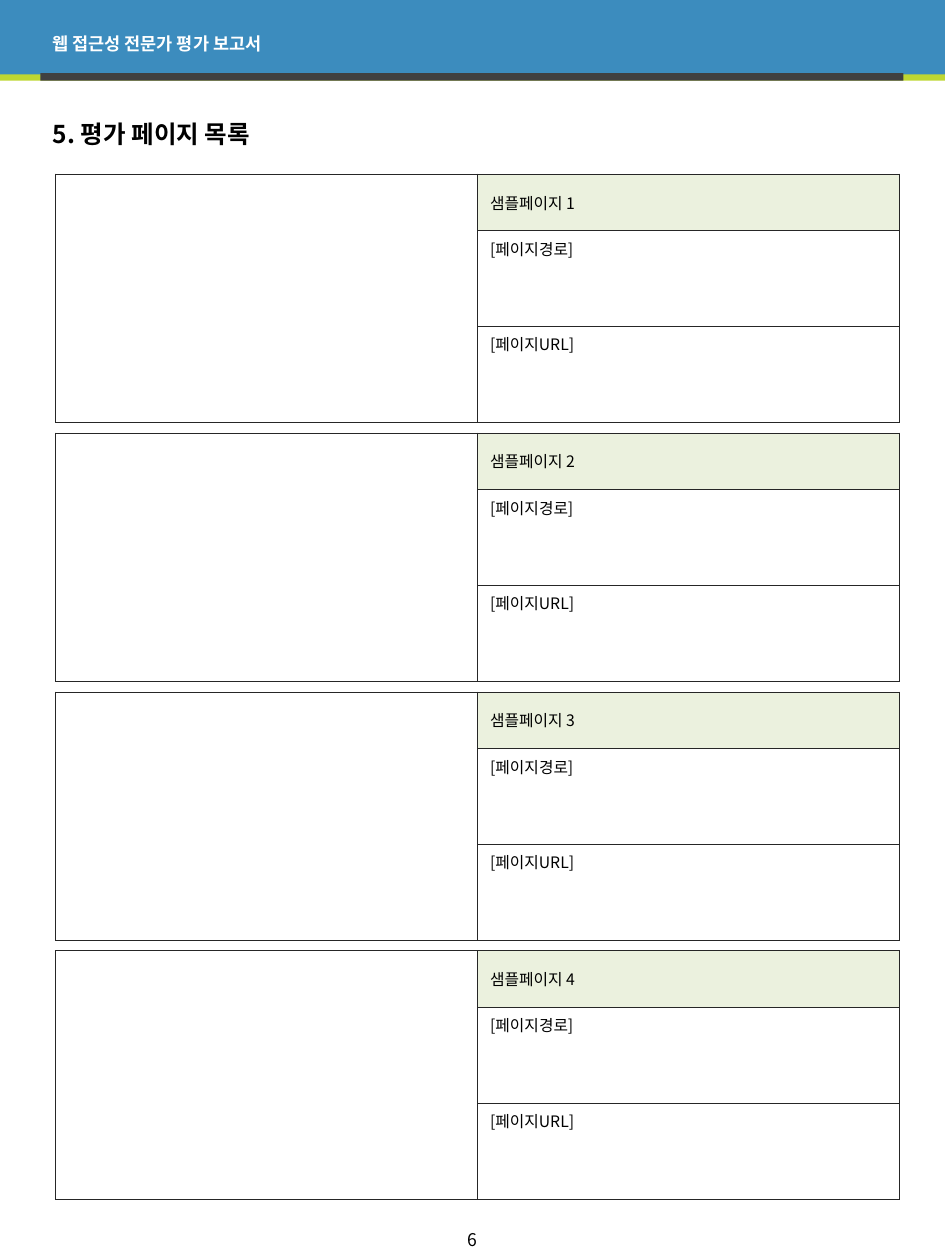
from lxml.etree import SubElement
from pptx import Presentation
from pptx.dml.color import RGBColor
from pptx.enum.shapes import MSO_SHAPE
from pptx.enum.text import MSO_ANCHOR, PP_ALIGN
from pptx.oxml.ns import qn
from pptx.util import Inches, Pt

FONT = "Noto Sans CJK KR"
BLACK = RGBColor(0x00, 0x00, 0x00)
WHITE = RGBColor(0xFF, 0xFF, 0xFF)
BLUE = RGBColor(0x3C, 0x8C, 0xBE)
LIME = RGBColor(0xBE, 0xD7, 0x32)
GRAY = RGBColor(0x40, 0x40, 0x40)
PALE_GREEN = RGBColor(0xEB, 0xF1, 0xDE)
BORDER = RGBColor(0x26, 0x26, 0x26)


class ReportPage:
    def __init__(self, slide):
        self.slide = slide

    def style_text(self, para, size, color=BLACK, bold=False):
        for span in para.runs:
            span.font.size = Pt(size)
            span.font.bold = bold
            span.font.color.rgb = color
            span.font.name = FONT
            SubElement(span.font._element, qn("a:ea"), typeface=FONT)

    def bar(self, left, top, width, height, color):
        bar = self.slide.shapes.add_shape(
            MSO_SHAPE.RECTANGLE, Inches(left), Inches(top), Inches(width), Inches(height))
        bar.shadow.inherit = False
        bar.fill.solid()
        bar.fill.fore_color.rgb = color
        bar.line.fill.background()

    def text(self, content, left, top, width, height, size,
             color=BLACK, bold=False, align=PP_ALIGN.LEFT):
        box = self.slide.shapes.add_textbox(
            Inches(left), Inches(top), Inches(width), Inches(height))
        frame = box.text_frame
        frame.word_wrap = True
        frame.vertical_anchor = MSO_ANCHOR.MIDDLE
        frame.text = content
        para = frame.paragraphs[0]
        para.alignment = align
        self.style_text(para, size, color, bold)

    def borders(self, cell):
        properties = cell._tc.get_or_add_tcPr()
        for side in ("a:lnL", "a:lnR", "a:lnT", "a:lnB"):
            line = SubElement(properties, qn(side), w=str(Pt(0.25)))
            fill = SubElement(line, qn("a:solidFill"))
            SubElement(fill, qn("a:srgbClr"), val=str(BORDER))

    def sample_table(self, labels, left, top, column_width, row_heights):
        table = self.slide.shapes.add_table(
            len(labels), 2, Inches(left), Inches(top),
            Inches(2 * column_width), Inches(sum(row_heights))).table
        table.first_row = False
        table.horz_banding = False
        for column in table.columns:
            column.width = Inches(column_width)
        for row, height in zip(table.rows, row_heights):
            row.height = Inches(height)
        for cell in [cell for row in table.rows for cell in row.cells]:
            self.borders(cell)
            cell.fill.background()

        # Left column: one tall blank cell for the screen capture
        for index, label in enumerate(labels):
            blank = table.cell(index, 0)
            blank.margin_top = blank.margin_bottom = 0
            cell = table.cell(index, 1)
            cell.text_frame.text = label
            self.style_text(cell.text_frame.paragraphs[0], 9)
        table.cell(0, 0).merge(table.cell(len(labels) - 1, 0))

        # Heading cell
        heading = table.cell(0, 1)
        heading.vertical_anchor = MSO_ANCHOR.MIDDLE
        heading.fill.solid()
        heading.fill.fore_color.rgb = PALE_GREEN


def main():
    deck = Presentation()
    deck.slide_width = Inches(7.5)
    deck.slide_height = Inches(10)
    page = ReportPage(deck.slides.add_slide(deck.slide_layouts[6]))

    # Header band
    page.bar(0, 0.58, 7.5, 0.06, LIME)
    page.bar(0, 0, 7.5, 0.59, BLUE)
    page.bar(0.32, 0.58, 6.85, 0.06, GRAY)
    page.text("웹 접근성 전문가 평가 보고서", 0.32, 0.11, 6.85, 0.47, 10, WHITE, bold=True)

    # Section title
    page.text("5. 평가 페이지 목록", 0.32, 0.83, 6.85, 0.47, 14, bold=True)

    # Sample page tables
    for index in range(4):
        labels = [f"샘플페이지 {index + 1}", "[페이지경로]", "[페이지URL]"]
        page.sample_table(labels, 0.44, 1.38 + index * 2.055, 3.35, (0.45, 0.76, 0.76))

    # Page number
    page.text("6", 0, 9.65, 7.5, 0.37, 10, align=PP_ALIGN.CENTER)

    deck.save("out.pptx")


if __name__ == "__main__":
    main()
